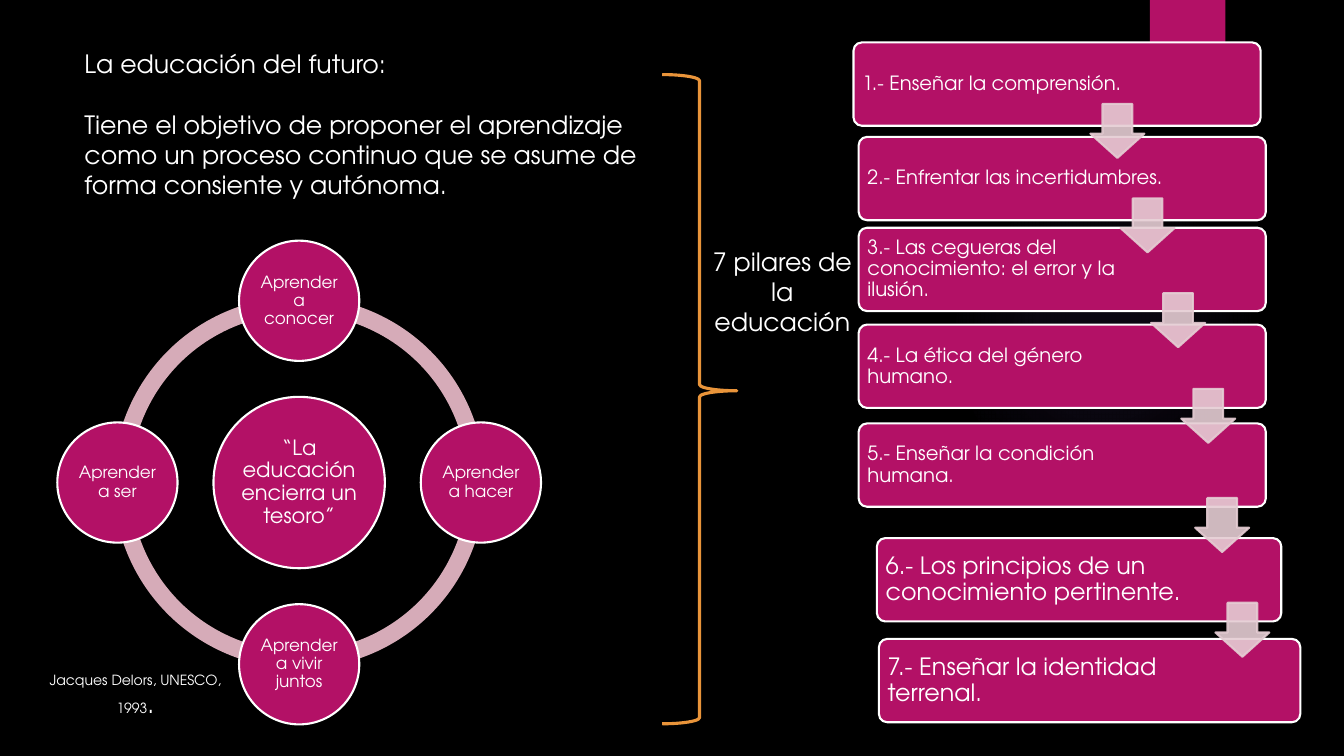
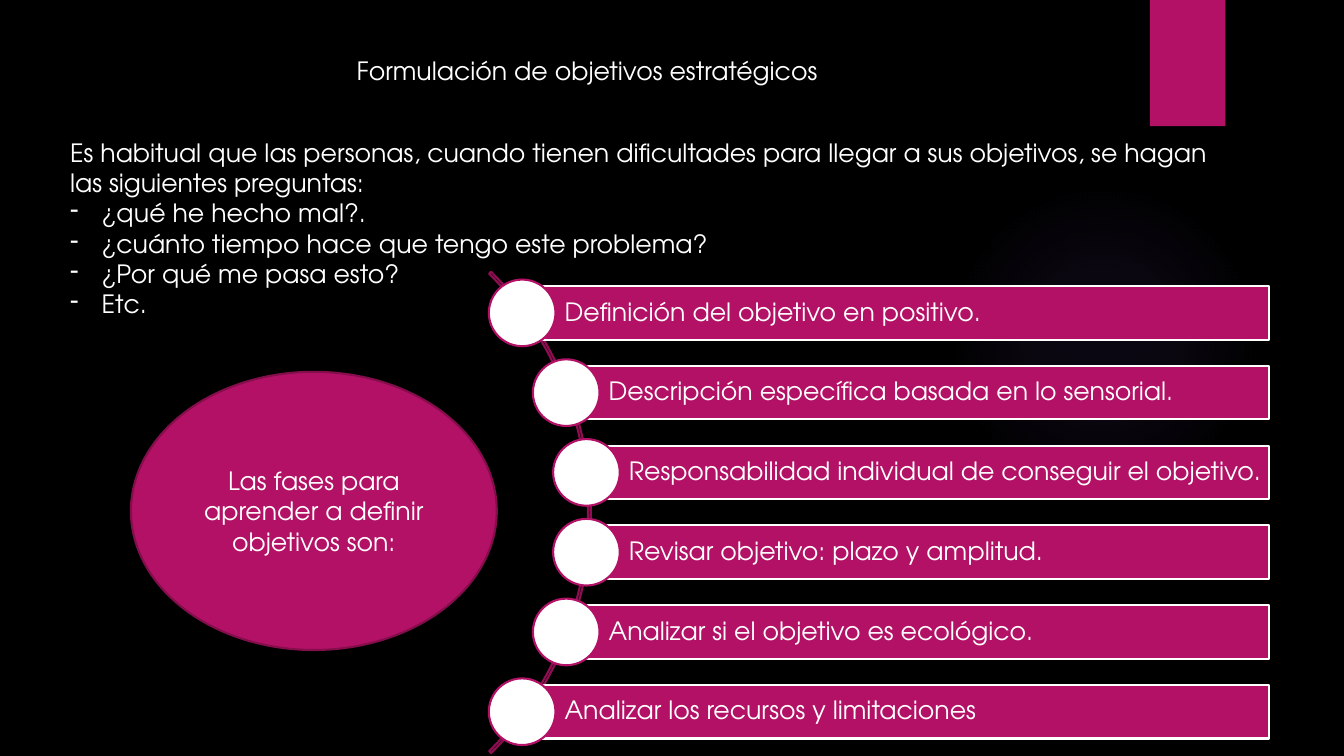
import lxml.etree
import pptx
import pptx.dml.color
import pptx.enum.shapes
import pptx.enum.text
import pptx.oxml
import pptx.oxml.ns
import pptx.util

COLORS = {
    "black": "000000",
    "white": "FFFFFF",
    "magenta": "B31166",
    "dark magenta": "8F0E52",
    "ellipse edge": "840D4B",
    "ring": "D6ABB8",
    "arrow": "E5CCD3",
    "orange": "E9943A",
    "glow": "9B6BF2",
}
FONT = "TeX Gyre Adventor"
KIND = pptx.enum.shapes.MSO_SHAPE
LEFT = pptx.enum.text.PP_ALIGN.LEFT
CENTER = pptx.enum.text.PP_ALIGN.CENTER


def place(slide, kind, box, fill=None, line=None, weight=1.5, margins=(0.25, 0.13, 0.25, 0.13)):
    box = [pptx.util.Cm(length) for length in box]
    if kind is None:
        shape = slide.shapes.add_textbox(*box)
    else:
        shape = slide.shapes.add_shape(kind, *box)
        shape.shadow.inherit = False
        for format_fill, color in ((shape.fill, fill), (shape.line.fill, line)):
            if color:
                format_fill.solid()
                format_fill.fore_color.rgb = pptx.dml.color.RGBColor.from_string(COLORS[color])
            else:
                format_fill.background()
        if line:
            shape.line.width = pptx.util.Pt(weight)
    frame = shape.text_frame
    frame.word_wrap = True
    anchor = pptx.enum.text.MSO_ANCHOR
    frame.vertical_anchor = anchor.TOP if kind is None else anchor.MIDDLE
    frame.margin_left, frame.margin_top, frame.margin_right, frame.margin_bottom = [
        pptx.util.Cm(margin) for margin in margins
    ]
    return shape


def write(paragraph, text, size=18, alignment=LEFT, spacing=1.0):
    paragraph.alignment = alignment
    paragraph.line_spacing = spacing
    run = paragraph.add_run()
    run.text = text
    run.font.name = FONT
    run.font.size = pptx.util.Pt(size)
    run.font.color.rgb = pptx.dml.color.RGBColor.from_string(COLORS["white"])


presentation = pptx.Presentation()
presentation.slide_width = pptx.util.Cm(33.87)
presentation.slide_height = pptx.util.Cm(19.05)
blank_layout = presentation.slide_layouts[6]
pillars_slide = presentation.slides.add_slide(blank_layout)
goals_slide = presentation.slides.add_slide(blank_layout)

master = presentation.slide_master
master.background.fill.solid()
master.background.fill.fore_color.rgb = pptx.dml.color.RGBColor.from_string(COLORS["black"])

glow = place(pillars_slide, KIND.OVAL, (23.9, 4.65, 7.82, 7.82))
stops = "".join(
    f'<a:gs pos="{position}000"><a:srgbClr val="{COLORS["glow"]}"><a:alpha val="{alpha}000"/></a:srgbClr></a:gs>'
    for position, alpha in ((0, 7), (36, 6), (69, 0))
)
gradient = pptx.oxml.parse_xml(
    f'<a:gradFill {pptx.oxml.ns.nsdecls("a")} rotWithShape="1"><a:gsLst>{stops}</a:gsLst>'
    '<a:path path="circle"><a:fillToRect l="50000" t="50000" r="50000" b="50000"/></a:path></a:gradFill>'
)
properties = glow.element.spPr
properties.replace(properties.find(pptx.oxml.ns.qn("a:noFill")), gradient)
band = place(pillars_slide, KIND.RECTANGLE, (28.98, 0, 1.9, 3.18), "magenta")
for number, shape in enumerate((glow, band), 20):
    shape.element.nvSpPr.cNvPr.id = number
    master.shapes.element.append(shape.element)

intro = place(pillars_slide, None, (1.88, 1.09, 14.48, 4.11)).text_frame
write(intro.paragraphs[0], "La educación del futuro:")
objective = intro.add_paragraph()
objective.space_before = pptx.util.Pt(21.6)
write(
    objective,
    "Tiene el objetivo de proponer el aprendizaje como un proceso continuo "
    "que se asume de forma consiente y autónoma.",
)

center_x, center_y, orbit = 7.54, 12.16, 4.58
ring_size = 9.37
for start in (0, 54, 108, 162):
    arc = place(
        pillars_slide,
        KIND.BLOCK_ARC,
        (center_x - ring_size / 2, center_y - ring_size / 2, ring_size, ring_size),
        "ring",
    )
    for index, value in enumerate((start, (start + 54) % 216, 0.046)):
        arc.adjustments[index] = value

learnings = [
    ("“La educación encierra un tesoro”", 0, 0, 4.32, 15),
    ("Aprender a conocer", 0, -1, 3.03, 12),
    ("Aprender a hacer", 1, 0, 3.03, 12),
    ("Aprender a vivir juntos", 0, 1, 3.03, 12),
    ("Aprender a ser", -1, 0, 3.03, 12),
]
for text, across, down, diameter, size in learnings:
    left = center_x + across * orbit - diameter / 2
    top = center_y + down * orbit - diameter / 2
    circle = place(
        pillars_slide, KIND.OVAL, (left, top, diameter, diameter), "magenta", "white", margins=[0.04] * 4
    )
    write(circle.text_frame.paragraphs[0], text, size, CENTER, 0.9)

credit = place(pillars_slide, None, (0.48, 16.79, 5.87, 1.45)).text_frame.paragraphs[0]
write(credit, "Jacques Delors, UNESCO, 1993", 10, CENTER)
write(credit, ".", 18, CENTER)

brace = place(pillars_slide, KIND.RIGHT_BRACE, (16.69, 1.88, 1.88, 16.36), None, "orange", 2.25)
brace.adjustments[0] = 0.083
brace.adjustments[1] = 0.487

pillars = [
    ("1.- Enseñar la comprensión.", 21.51, 1.07, 10.26, 2.53, 14),
    ("2.- Enfrentar las incertidumbres.", 21.64, 3.45, 10.26, 2.27, 14),
    ("3.- Las cegueras del conocimiento: el error y la ilusión.", 21.64, 5.74, 10.26, 2.27, 14),
    ("4.- La ética del género humano.", 21.64, 8.18, 10.26, 2.27, 14),
    ("5.- Enseñar la condición humana.", 21.64, 10.67, 10.26, 2.27, 14),
    ("6.- Los principios de un conocimiento pertinente.", 22.1, 13.56, 10.19, 2.15, 17),
    ("7.- Enseñar la identidad terrenal.", 22.15, 16.1, 10.62, 3.39, 17),
]
for text, left, top, width, right_margin, size in pillars:
    card = place(
        pillars_slide,
        KIND.ROUNDED_RECTANGLE,
        (left, top, width, 2.1),
        "magenta",
        "white",
        margins=(0.16, 0.16, right_margin, 0.16),
    )
    card.adjustments[0] = 0.1
    write(card.text_frame.paragraphs[0], text, size, spacing=0.9)

arrow_corners = [
    (27.48, 2.62), (28.24, 5), (29.01, 7.39), (29.77, 9.8), (30.12, 12.55), (30.63, 15.19),
]
for left, top in arrow_corners:
    arrow = place(pillars_slide, KIND.DOWN_ARROW, (left, top, 1.36, 1.36), "arrow", "arrow")
    arrow.adjustments[0] = 0.55
    arrow.adjustments[1] = 0.45
    for color in arrow.element.spPr.iter(pptx.oxml.ns.qn("a:srgbClr")):
        lxml.etree.SubElement(color, pptx.oxml.ns.qn("a:alpha")).set("val", "90000")

pillars_label = place(pillars_slide, None, (17.63, 6.07, 4.17, 2.57))
write(pillars_label.text_frame.paragraphs[0], "7 pilares de la educación", alignment=CENTER)

title = place(goals_slide, None, (1.88, 1.27, 25.83, 1.02))
write(title.text_frame.paragraphs[0], "Formulación de objetivos estratégicos", alignment=CENTER)

questions = place(goals_slide, None, (1.52, 3.33, 30, 6.4)).text_frame
write(
    questions.paragraphs[0],
    "Es habitual que las personas, cuando tienen dificultades para llegar a sus objetivos, "
    "se hagan las siguientes preguntas:",
)
for text in (
    "¿qué he hecho mal?.",
    "¿cuánto tiempo hace que tengo este problema?",
    "¿Por qué me pasa esto?",
    "Etc.",
):
    question = questions.add_paragraph()
    write(question, text)
    paragraph_properties = question._p.get_or_add_pPr()
    indent = pptx.util.Cm(0.79)
    paragraph_properties.set("marL", str(indent))
    paragraph_properties.set("indent", str(-indent))
    lxml.etree.SubElement(paragraph_properties, pptx.oxml.ns.qn("a:buChar")).set("char", "-")

curve = place(goals_slide, KIND.BLOCK_ARC, (-2.26, 4.34, 17.15, 17.15), None, "dark magenta")
for index, value in enumerate((189, 27, 0.004)):
    curve.adjustments[index] = value

phases = [
    ("Definición del objetivo en positivo.", 13.16),
    ("Descripción específica basada en lo sensorial.", 14.27),
    ("Responsabilidad individual de conseguir el objetivo.", 14.78),
    ("Revisar objetivo: plazo y amplitud.", 14.78),
    ("Analizar si el objetivo es ecológico.", 14.27),
    ("Analizar los recursos y limitaciones", 13.16),
]
bar_right, bar_height, dot_size = 31.98, 1.35, 1.68
for index, (text, left) in enumerate(phases):
    top = 7.21 + 2.01 * index
    bar = place(
        goals_slide,
        KIND.RECTANGLE,
        (left, top, bar_right - left, bar_height),
        "magenta",
        "white",
        margins=(1.07, 0.13, 0.13, 0.13),
    )
    write(bar.text_frame.paragraphs[0], text, spacing=0.9)
    dot_top = top + (bar_height - dot_size) / 2
    place(goals_slide, KIND.OVAL, (left - dot_size / 2, dot_top, dot_size, dot_size), "white", "magenta")

phases_ellipse = place(goals_slide, KIND.OVAL, (3.3, 9.37, 9.22, 7.01), "magenta", "ellipse edge")
write(
    phases_ellipse.text_frame.paragraphs[0],
    "Las fases para aprender a definir objetivos son:",
    alignment=CENTER,
)

presentation.save("out.pptx")
